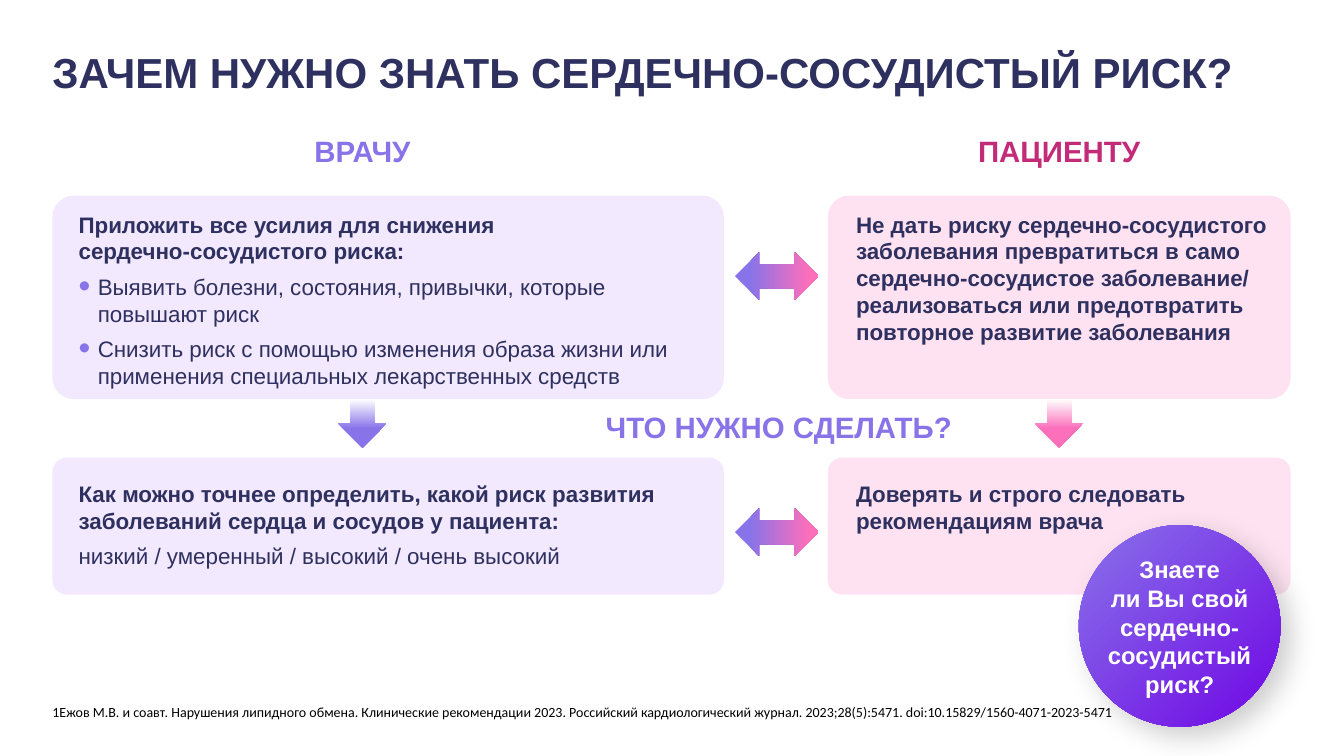
from copy import deepcopy

from lxml.etree import SubElement
from pptx import Presentation
from pptx.dml.color import RGBColor
from pptx.enum.shapes import MSO_SHAPE
from pptx.enum.text import MSO_ANCHOR, PP_ALIGN
from pptx.oxml.ns import qn
from pptx.util import Inches, Pt

CELL = Inches(0.1)
COLORS = {
    "ink": "2E305F", "violet": "8873E9", "lilac": "EAD8FE", "pink": "FB6FBB",
    "berry": "C32B78", "purple": "7006E5", "white": "FFFFFF", "black": "000000",
}
MARGIN = 5.2
SIDES = [
    {"left": MARGIN, "width": 66.6, "middle": 35.95, "inset": 2.6, "text_width": 62.4,
     "heading": "ВРАЧУ", "heading_color": "violet", "arrow": "violet",
     "panel": "lilac", "opacity": 55},
    {"left": 82.1, "width": 45.9, "middle": 105.05, "inset": 2.8, "text_width": 41.2,
     "heading": "ПАЦИЕНТУ", "heading_color": "berry", "arrow": "pink",
     "panel": "pink", "opacity": 20},
]
ROWS = [
    {"top": 19.4, "height": 20.2, "text_top": 20.9, "arrow_top": 25, "texts": [
        [("Приложить все усилия для снижения\nсердечно-сосудистого риска:", {"bold": True}),
         ("Выявить болезни, состояния, привычки, которые повышают риск", {"bullet": True}),
         ("Снизить риск с помощью изменения образа жизни или применения "
          "специальных лекарственных средств", {"bullet": True})],
        [("Не дать риску сердечно-сосудистого заболевания превратиться в само "
          "сердечно-сосудистое заболевание/ реализоваться или предотвратить "
          "повторное развитие заболевания", {"bold": True})],
    ]},
    {"top": 45.4, "height": 13.6, "text_top": 47.6, "arrow_top": 50.4, "texts": [
        [("Как можно точнее определить, какой риск развития заболеваний "
          "сердца и сосудов у пациента:", {"bold": True}),
         ("низкий / умеренный / высокий / очень высокий", {})],
        [("Доверять и строго следовать рекомендациям врача", {"bold": True})],
    ]},
]


def color(name):
    return RGBColor.from_string(COLORS[name])


def grid(*cells):
    return [round(cell * CELL) for cell in cells]


def add_bullet(para):
    properties = para._p.get_or_add_pPr()
    properties.set("marL", str(Inches(0.19)))
    properties.set("indent", str(-Inches(0.19)))
    tint = SubElement(properties, qn("a:buClr"))
    SubElement(tint, qn("a:srgbClr"), val=COLORS["violet"])
    SubElement(properties, qn("a:buSzPct"), val="150000")
    SubElement(properties, qn("a:buFont"), typeface="Arial")
    SubElement(properties, qn("a:buChar"), char="•")


def write(para, text, size=16, ink="ink", bold=False, font="Arial",
          align=None, after=6, spacing=None, bullet=False):
    para.text = text
    para.alignment = align
    para.space_after = Pt(after)
    if spacing:
        para.line_spacing = spacing
    if bullet:
        add_bullet(para)
    for span in para.runs:
        span.font.size = Pt(size)
        span.font.name = font
        span.font.bold = bold
        span.font.color.rgb = color(ink)
    for line_break in para._p.findall(qn("a:br")):
        line_break.insert(0, deepcopy(para.runs[0]._r.rPr))


def add_text(page, area, paragraphs, anchor=MSO_ANCHOR.TOP):
    frame = page.shapes.add_textbox(*grid(*area)).text_frame
    frame.word_wrap = True
    frame.vertical_anchor = anchor
    frame.margin_left = frame.margin_right = frame.margin_top = frame.margin_bottom = 0
    for number, (text, style) in enumerate(paragraphs):
        para = frame.add_paragraph() if number else frame.paragraphs[0]
        write(para, text, **style)


def add_heading(page, middle, top, text, ink):
    style = {"size": 21, "ink": ink, "bold": True, "align": PP_ALIGN.CENTER}
    add_text(page, (middle - 20.85, top, 41.7, 4.5), [(text, style)])


def add_plain_shape(page, kind, area):
    shape = page.shapes.add_shape(kind, *grid(*area))
    shape.shadow.inherit = False
    shape.line.fill.background()
    return shape


def add_panel(page, side, row):
    area = side["left"], row["top"], side["width"], row["height"]
    panel = add_plain_shape(page, MSO_SHAPE.ROUNDED_RECTANGLE, area)
    panel.adjustments[0] = 0.105
    panel.fill.solid()
    panel.fill.fore_color.rgb = color(side["panel"])
    tint = panel.fill._xPr.find(".//" + qn("a:srgbClr"))
    SubElement(tint, qn("a:alpha"), val=str(side["opacity"] * 1000))


def add_gradient_shape(page, kind, area, stops, angle=0):
    shape = add_plain_shape(page, kind, area)
    shape.fill.gradient()
    shape.fill.gradient_angle = angle
    for stop, (position, name) in zip(shape.fill.gradient_stops, stops):
        stop.position = position
        stop.color.rgb = color(name)
    return shape


def add_down_arrow(page, side):
    area = side["middle"] - 2.4, 39.6, 4.8, 4.8
    stops = (0, "white"), (0.61, side["arrow"])
    add_gradient_shape(page, MSO_SHAPE.RIGHT_ARROW, area, stops).rotation = 90


def add_exchange_arrow(page, top):
    stops = (0.17, "violet"), (0.87, "pink")
    add_gradient_shape(page, MSO_SHAPE.LEFT_RIGHT_ARROW, (72.9, top, 8.3, 4.8), stops)


def add_badge(page, left, top, size, text):
    stops = (0, "violet"), (1, "purple")
    badge = add_gradient_shape(page, MSO_SHAPE.OVAL, (left, top, size, size), stops, 315)
    effects = badge._element.spPr.find(qn("a:effectLst"))
    shadow = SubElement(effects, qn("a:outerShdw"), blurRad=str(Pt(20)),
                        dist=str(Pt(10)), dir="2700000", algn="tl", rotWithShape="0")
    tint = SubElement(shadow, qn("a:srgbClr"), val=COLORS["black"])
    SubElement(tint, qn("a:alpha"), val="20000")
    style = {"size": 17, "ink": "white", "bold": True, "align": PP_ALIGN.CENTER, "after": 0}
    add_text(page, (left, top + 2.8, size, 14.5), [(text, style)], MSO_ANCHOR.MIDDLE)


def main():
    deck = Presentation()
    deck.slide_width, deck.slide_height = Inches(13.33), Inches(7.5)
    page = deck.slides.add_slide(deck.slide_layouts[6])

    add_text(page, (MARGIN, 5.2, 122.8, 6.6), [
        ("ЗАЧЕМ НУЖНО ЗНАТЬ СЕРДЕЧНО-СОСУДИСТЫЙ РИСК?",
         {"size": 30, "bold": True, "spacing": 0.9, "after": 0})])
    for side in SIDES:
        add_heading(page, side["middle"], 13.2, side["heading"], side["heading_color"])
        add_down_arrow(page, side)
    for row in ROWS:
        for side, paragraphs in zip(SIDES, row["texts"]):
            add_panel(page, side, row)
            area = (side["left"] + side["inset"], row["text_top"], side["text_width"],
                    row["top"] + row["height"] - row["text_top"])
            add_text(page, area, paragraphs)
        add_exchange_arrow(page, row["arrow_top"])
    add_heading(page, 77.25, 40.6, "ЧТО НУЖНО СДЕЛАТЬ?", "violet")
    add_badge(page, 107, 52.1, 20, "Знаете\nли Вы свой сердечно- сосудистый риск?")
    add_text(page, (MARGIN, 69.8, 125.4, 1.7), [
        ("1Ежов М.В. и соавт. Нарушения липидного обмена. Клинические рекомендации 2023. "
         "Российский кардиологический журнал. 2023;28(5):5471. "
         "doi:10.15829/1560-4071-2023-5471",
         {"size": 10, "ink": "black", "font": "Calibri", "after": 0})])
    deck.save("out.pptx")


if __name__ == "__main__":
    main()
